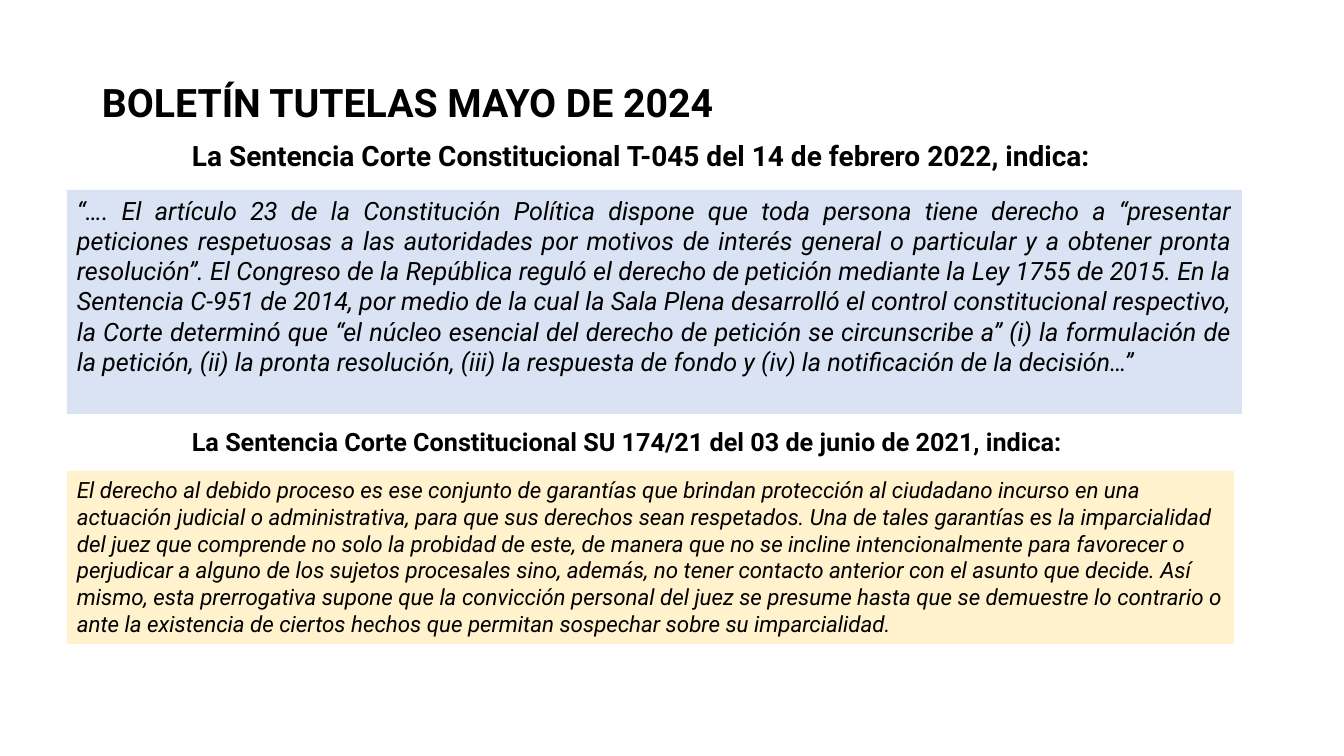
from pptx import Presentation
from pptx.dml.color import RGBColor
from pptx.enum.shapes import MSO_SHAPE
from pptx.enum.text import MSO_ANCHOR, MSO_AUTO_SIZE, PP_ALIGN
from pptx.util import Emu, Pt

EMU_PER_PX = 914400 / 100.8
COLORS = {"text": "000000", "blue": "DAE3F3", "yellow": "FFF2CC"}


def px(length):
    return Emu(round(length * EMU_PER_PX))


def write(shape, text, size, align=PP_ALIGN.LEFT, bold=False, italic=False):
    frame = shape.text_frame
    frame.text = text
    frame.word_wrap = True
    frame.auto_size = MSO_AUTO_SIZE.NONE
    frame.vertical_anchor = MSO_ANCHOR.TOP
    paragraph = frame.paragraphs[0]
    paragraph.alignment = align
    font = paragraph.font
    font.name, font.size = "Roboto", Pt(size)
    font.bold, font.italic = bold, italic
    font.color.rgb = RGBColor.from_string(COLORS["text"])


presentation = Presentation()
presentation.slide_width, presentation.slide_height = px(1344), px(756)
slide = presentation.slides.add_slide(presentation.slide_layouts[5])

# Title
title = slide.shapes.title
title.left, title.top, title.width, title.height = px(42), px(73), px(1116), px(57)
write(title, "BOLETÍN TUTELAS MAYO DE 2024", 28, bold=True)
title.text_frame.margin_left = px(60)

# Headings of the two rulings: top, width, height, size, text
headings = [
    (134, 1014, 44, 20, "La Sentencia Corte Constitucional T-045 del 14 de febrero 2022, indica:"),
    (421, 1046, 40, 18, "La Sentencia Corte Constitucional SU 174/21 del 03 de junio de 2021, indica:"),
]
for top, width, height, size, text in headings:
    heading = slide.shapes.add_textbox(px(182), px(top), px(width), px(height))
    write(heading, text, size, bold=True)

# Quotations: top, width, height, fill, size, alignment, text
quotations = [
    (190, 1175, 224, "blue", 18, PP_ALIGN.JUSTIFY,
     "“…. El artículo 23 de la Constitución Política dispone que toda persona tiene derecho a "
     "“presentar peticiones respetuosas a las autoridades por motivos de interés general o "
     "particular y a obtener pronta resolución”. El Congreso de la República reguló el derecho de "
     "petición mediante la Ley 1755 de 2015. En la Sentencia C-951 de 2014, por medio de la cual "
     "la Sala Plena desarrolló el control constitucional respectivo, la Corte determinó que “el "
     "núcleo esencial del derecho de petición se circunscribe a” (i) la formulación de la "
     "petición, (ii) la pronta resolución, (iii) la respuesta de fondo y (iv) la notificación de "
     "la decisión…”"),
    (471, 1167, 173, "yellow", 16, PP_ALIGN.LEFT,
     "El derecho al debido proceso es ese conjunto de garantías que brindan protección al "
     "ciudadano incurso en una actuación judicial o administrativa, para que sus derechos sean "
     "respetados. Una de tales garantías es la imparcialidad del juez que comprende no solo la "
     "probidad de este, de manera que no se incline intencionalmente para favorecer o perjudicar "
     "a alguno de los sujetos procesales sino, además, no tener contacto anterior con el asunto "
     "que decide. Así mismo, esta prerrogativa supone que la convicción personal del juez se "
     "presume hasta que se demuestre lo contrario o ante la existencia de ciertos hechos que "
     "permitan sospechar sobre su imparcialidad."),
]
for top, width, height, fill, size, align, text in quotations:
    quotation = slide.shapes.add_shape(
        MSO_SHAPE.RECTANGLE, px(67), px(top), px(width), px(height))
    quotation.shadow.inherit = False
    quotation.fill.solid()
    quotation.fill.fore_color.rgb = RGBColor.from_string(COLORS[fill])
    quotation.line.fill.background()
    write(quotation, text, size, align, italic=True)

presentation.save("out.pptx")
